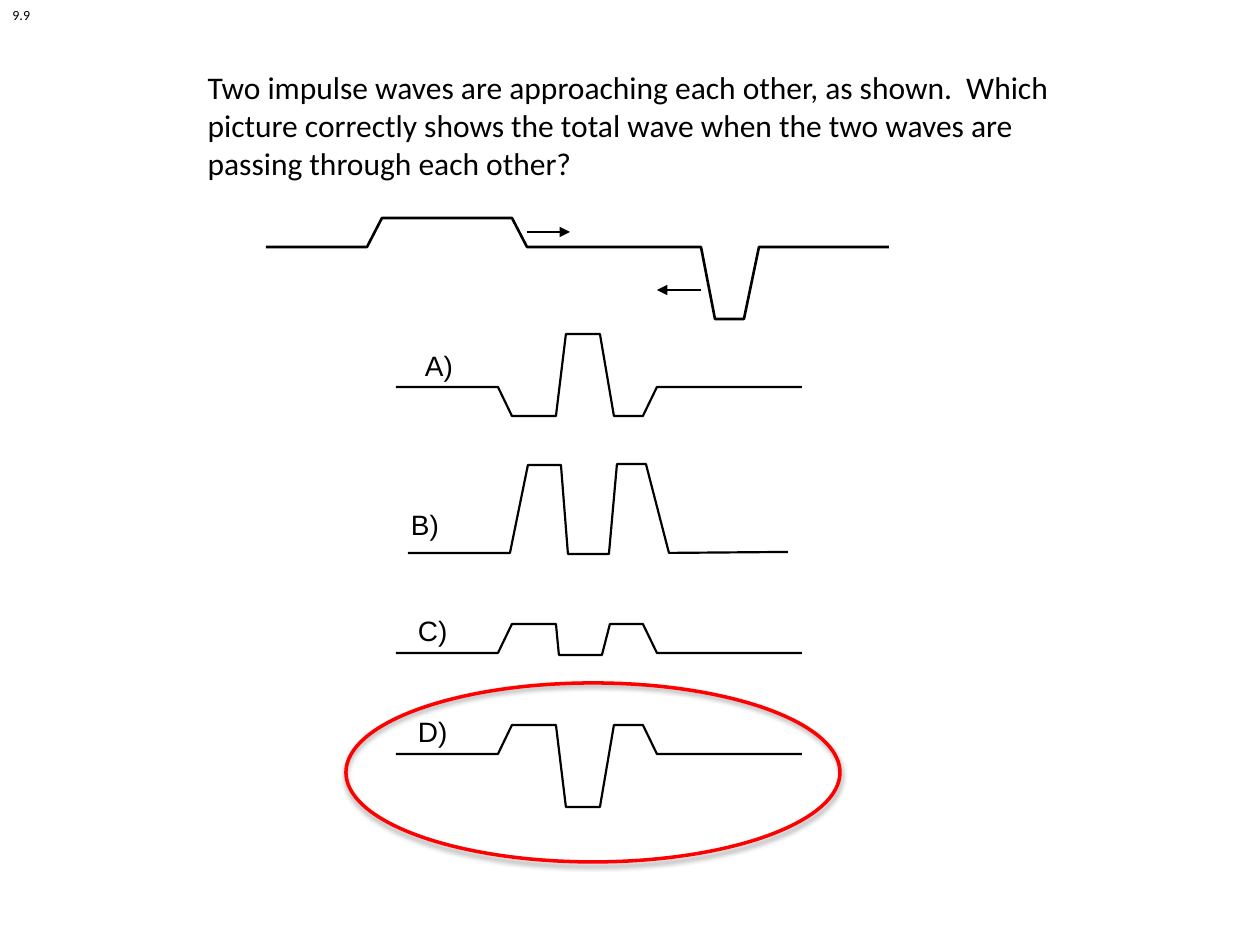
from dataclasses import dataclass

from lxml import etree
from pptx import Presentation, util as u
from pptx.dml.color import RGBColor
from pptx.enum import shapes, text
from pptx.oxml import ns

EMU_PER_PX = 914400 / 126


def px(value):
    return u.Emu(round(value * EMU_PER_PX))


@dataclass(frozen=True)
class Theme:
    ink: RGBColor = RGBColor(0, 0, 0)
    answer: RGBColor = RGBColor(255, 0, 0)
    body_font: str = "Calibri"
    label_font: str = "Arial"
    question_size: float = 18
    label_size: float = 16
    number_size: float = 8
    wave_width: float = 1.5
    option_width: float = 1.25
    ring_width: float = 2


class SlideBuilder:
    def __init__(self, slide, theme):
        self.slide = slide
        self.theme = theme

    def format_text(self, shape, content, font, size, **frame_format):
        frame = shape.text_frame
        frame.text = content
        for name, value in frame_format.items():
            setattr(frame, name, value)
        paragraph = frame.paragraphs[0]
        paragraph.alignment = text.PP_ALIGN.LEFT
        run_font = paragraph.runs[0].font
        for name, value in {"name": font, "size": u.Pt(size)}.items():
            setattr(run_font, name, value)
        run_font.color.rgb = self.theme.ink

    def question(self, content, left, top, width, height):
        title = self.slide.shapes.title
        box = {"left": left, "top": top, "width": width, "height": height}
        for name, value in box.items():
            setattr(title, name, px(value))
        self.format_text(title, content, self.theme.body_font, self.theme.question_size,
                         word_wrap=True, auto_size=text.MSO_AUTO_SIZE.NONE,
                         vertical_anchor=text.MSO_ANCHOR.TOP)

    def text_box(self, content, left, top, width, height, font, size, **frame_format):
        box = self.slide.shapes.add_textbox(*map(px, (left, top, width, height)))
        self.format_text(box, content, font, size, **frame_format)

    def option_label(self, content, left, top):
        margins = {f"margin_{side}": 0 for side in ("left", "top", "right", "bottom")}
        self.text_box(content, left, top, 55, 29, self.theme.label_font,
                      self.theme.label_size, word_wrap=True, **margins)

    def outline(self, shape, color, width):
        shape.fill.background()
        shape.line.color.rgb = color
        shape.line.width = u.Pt(width)
        shape.shadow.inherit = False

    def wave(self, points, width):
        builder = self.slide.shapes.build_freeform(*points[0], scale=EMU_PER_PX)
        builder.add_line_segments(points[1:], close=False)
        self.outline(builder.convert_to_shape(), self.theme.ink, width)

    def arrow(self, start_x, end_x, y):
        connector = self.slide.shapes.add_connector(
            shapes.MSO_CONNECTOR.STRAIGHT, *map(px, (start_x, y, end_x, y)))
        connector.line.color.rgb = self.theme.ink
        connector.line.width = u.Pt(self.theme.wave_width)
        properties = connector._element.spPr
        etree.SubElement(properties.find(ns.qn("a:ln")), ns.qn("a:tailEnd"), type="triangle")
        etree.SubElement(properties, ns.qn("a:effectLst"))

    def answer_ring(self, left, top, width, height):
        """Red ellipse with a soft shadow straight below its line."""
        ring = self.slide.shapes.add_shape(
            shapes.MSO_SHAPE.OVAL, *map(px, (left, top, width, height)))
        self.outline(ring, self.theme.answer, self.theme.ring_width)
        effects = ring._element.spPr.find(ns.qn("a:effectLst"))
        shadow = etree.SubElement(effects, ns.qn("a:outerShdw"), blurRad="40000",
                                  dist="23000", dir="5400000", rotWithShape="0")
        color = etree.SubElement(shadow, ns.qn("a:srgbClr"), val=str(self.theme.ink))
        etree.SubElement(color, ns.qn("a:alpha"), val="35000")


def double_pulse(baseline, shoulder, middle, middle_xs):
    """Points of a wave with two shoulders around a middle; heights point down."""
    xs = (396, 498, 512, 556, *middle_xs, 643, 657, 802)
    heights = (0, 0, shoulder, shoulder, middle, middle, shoulder, shoulder, 0, 0)
    return [(x, baseline + height) for x, height in zip(xs, heights)]


def main():
    presentation = Presentation()
    presentation.slide_width, presentation.slide_height = px(1260), px(945)
    theme = Theme()
    slide = presentation.slides.add_slide(presentation.slide_layouts[5])
    builder = SlideBuilder(slide, theme)

    builder.question(
        "Two impulse waves are approaching each other, as shown.  Which picture correctly "
        "shows the total wave when the two waves are passing through each other?",
        195, 62, 922, 127)

    builder.wave([(266, 247), (367, 247), (382, 218), (512, 218), (527, 247), (701, 247),
                  (715, 319), (744, 319), (759, 247), (889, 247)], theme.wave_width)
    builder.arrow(527, 570, 232)
    builder.arrow(701, 657, 290)

    wide_middle, narrow_middle = (566, 600, 614), (559, 602, 610)
    options = [
        ("A)", 425, 349, double_pulse(387, 29, -53, wide_middle)),
        ("B)", 411, 508, [(408, 553), (510, 553), (528, 465), (561, 465), (568, 554),
                          (609, 554), (617, 464), (646, 464), (669, 553), (788, 552)]),
        ("C)", 418, 614, double_pulse(653, -29, 2, narrow_middle)),
        ("D)", 418, 715, double_pulse(754, -29, 53, wide_middle)),
    ]
    for label, left, top, points in options:
        builder.wave(points, theme.option_width)
        builder.option_label(label, left, top)

    builder.answer_ring(346, 683, 494, 179)
    builder.text_box("9.9", 0, 0, 43, 30, theme.body_font, theme.number_size,
                     word_wrap=False)
    presentation.save("out.pptx")


if __name__ == "__main__":
    main()
